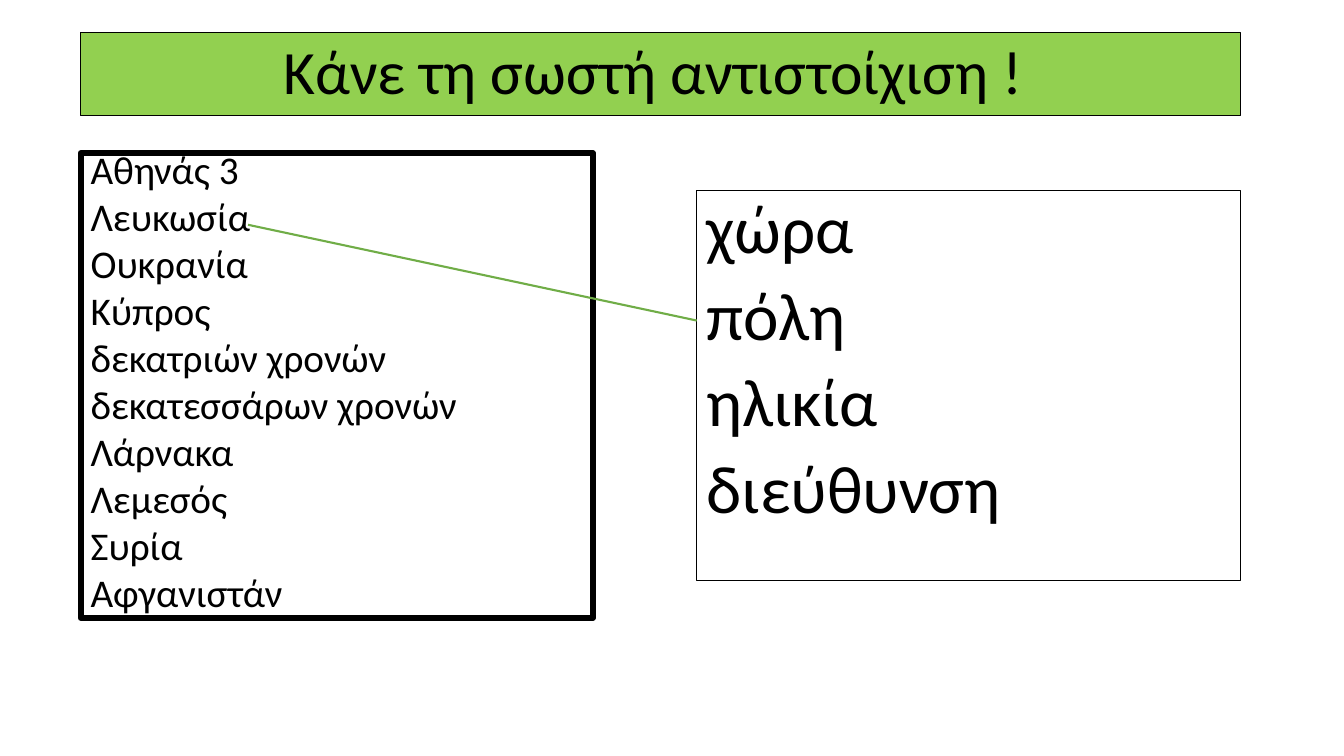
from lxml.etree import SubElement
from pptx import Presentation
from pptx.dml.color import RGBColor
from pptx.enum.shapes import MSO_CONNECTOR as Link, MSO_SHAPE as Shape
from pptx.enum.text import MSO_ANCHOR as Anchor, PP_ALIGN as Align
from pptx.oxml.ns import qn
from pptx.util import Inches, Pt

WIDE, HIGH = 13.33, 7.5
LEFT, RIGHT = 0.8, 12.3
PAIR = 6.91
FONT, INK, GREEN, LEAF = "Calibri", "000000", "92D050", "70AD47"

TITLE = ["Κάνε τη σωστή αντιστοίχιση ! "]
WORDS = ["Αθηνάς 3", "Λευκωσία", "Ουκρανία", "Κύπρος", "δεκατριών χρονών",
         "δεκατεσσάρων χρονών", "Λάρνακα", "Λεμεσός", "Συρία", "Αφγανιστάν"]
KINDS = ["χώρα", "πόλη", "ηλικία", "διεύθυνση"]

# left, top, width, height, lines, size, spacing, border, fill, align, anchor
BOXES = [
    (LEFT, 0.32, RIGHT - LEFT, 0.83, TITLE, 44, 0.9, 0.75, GREEN,
     Align.CENTER, Anchor.MIDDLE),
    (LEFT, 1.52, 5.08, 4.61, WORDS, 28, 0.7, 4.5, None,
     Align.LEFT, Anchor.TOP),
    (PAIR, 1.89, RIGHT - PAIR, 3.87, KINDS, 48, 0.9, 0.75, None,
     Align.LEFT, Anchor.TOP),
]
MATCH = (2.46, 2.23, PAIR, 3.18)


def color(code):
    return RGBColor.from_string(code)


def add_box(slide, place, lines, size, space, edge, fill, align, anchor):
    box = slide.shapes.add_shape(Shape.RECTANGLE, *map(Inches, place))
    box.shadow.inherit = False
    if fill:
        box.fill.solid()
        box.fill.fore_color.rgb = color(fill)
    else:
        box.fill.background()
    box.line.color.rgb = color(INK)
    box.line.width = Pt(edge)
    frame = box.text_frame
    frame.word_wrap = True
    frame.vertical_anchor = anchor
    for i, text in enumerate(lines):
        para = frame.add_paragraph() if i else frame.paragraphs[0]
        para.alignment = align
        para.line_spacing = space
        if i:
            para.space_before = Pt(10)
        run = para.add_run()
        run.text = text
        run.font.name = FONT
        run.font.size = Pt(size)
        run.font.color.rgb = color(INK)


def add_link(slide, ends):
    link = slide.shapes.add_connector(Link.STRAIGHT, *map(Inches, ends))
    link.line.color.rgb = color(LEAF)
    link.line.width = Pt(1.5)
    SubElement(link._element.spPr, qn("a:effectLst"))


def main():
    deck = Presentation()
    deck.slide_width, deck.slide_height = Inches(WIDE), Inches(HIGH)
    slide = deck.slides.add_slide(deck.slide_layouts[6])
    for box in BOXES:
        add_box(slide, box[:4], *box[4:])
    add_link(slide, MATCH)
    deck.save("out.pptx")


if __name__ == "__main__":
    main()
